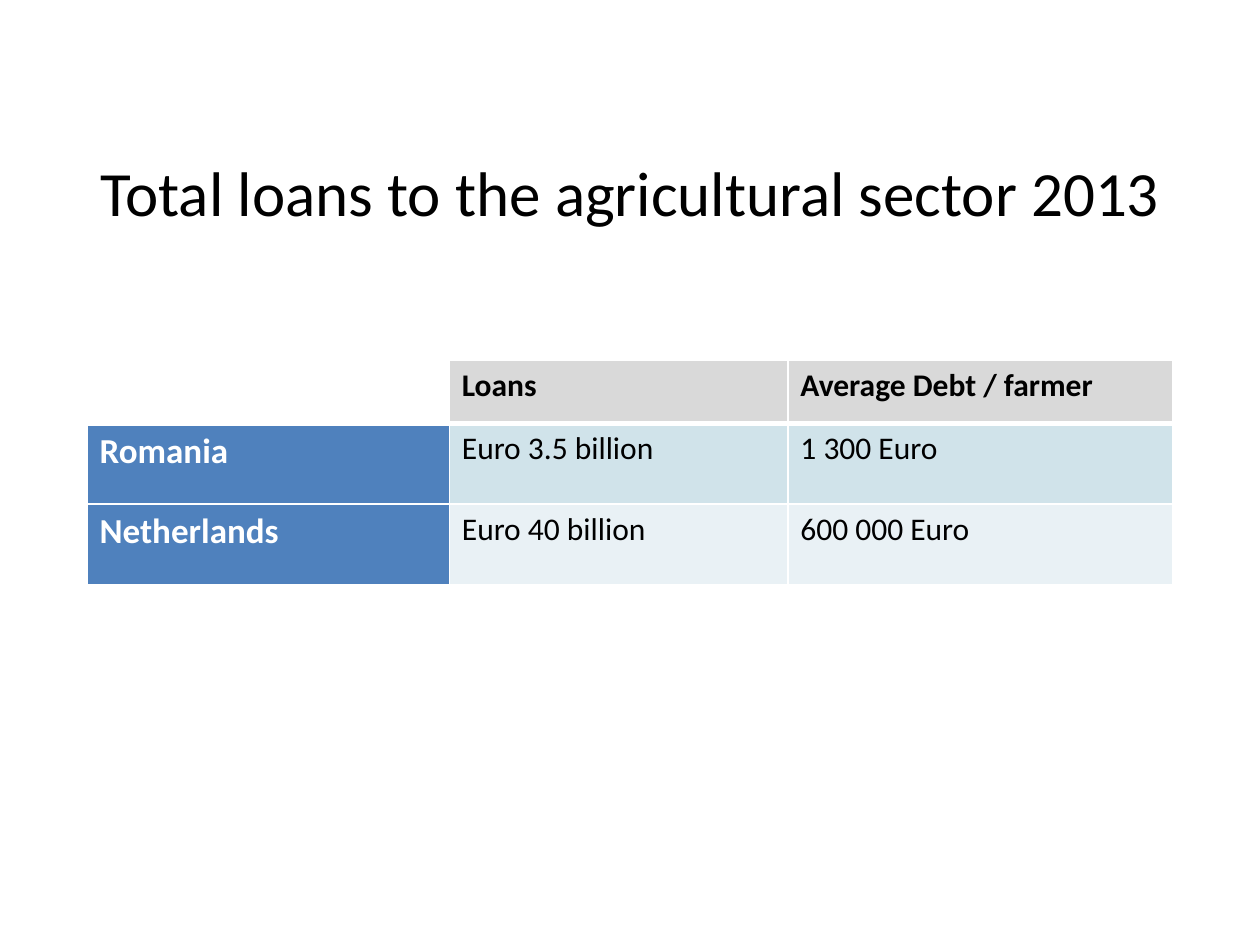
from lxml import etree
from pptx import Presentation
from pptx.dml.color import RGBColor
from pptx.enum.text import MSO_ANCHOR, PP_ALIGN
from pptx.oxml.ns import qn
from pptx.util import Pt

MIDDLE = MSO_ANCHOR.MIDDLE
CENTER = PP_ALIGN.CENTER
FONT = "Calibri"
BLACK = RGBColor(0x00, 0x00, 0x00)
WHITE = RGBColor(0xFF, 0xFF, 0xFF)
GREY = RGBColor(0xD9, 0xD9, 0xD9)
BLUE = RGBColor(0x4F, 0x81, 0xBD)
BANDS = [RGBColor(0xD0, 0xE3, 0xEA), RGBColor(0xE9, 0xF1, 0xF5)]

TITLE = "Total loans to the agricultural sector 2013"
LOANS = [
    ["", "Loans", "Average Debt / farmer"],
    ["Romania", "Euro 3.5 billion", "1 300 Euro"],
    ["Netherlands", "Euro 40 billion", "600 000 Euro"],
]
COLUMN_WIDTHS = [207, 193.5, 220]
ROW_HEIGHTS = [36, 46, 46]


def format_font(font, size, color, bold=False):
    """Set typeface, size, colour and weight of a font."""
    font.name = FONT
    font.size = Pt(size)
    font.bold = bold
    font.color.rgb = color


def add_border(cell, side, width):
    """Add a solid white border to one side of a cell."""
    properties = cell._tc.get_or_add_tcPr()
    line = etree.SubElement(properties, qn(f"a:ln{side}"), w=str(Pt(width)))
    fill = etree.SubElement(line, qn("a:solidFill"))
    etree.SubElement(fill, qn("a:srgbClr"), val=str(WHITE))


def cell_style(row, column):
    """Return fill, text size, text colour and weight for a table position."""
    if row == 0:
        return (GREY if column else WHITE), 18, BLACK, True
    if column == 0:
        return BLUE, 20, WHITE, True
    return BANDS[row - 1], 18, BLACK, False


def place_title(slide, left, top, width, height):
    """Move the title placeholder into the box and fill it."""
    title = slide.shapes.title
    title.left, title.top = Pt(left), Pt(top)
    title.width, title.height = Pt(width), Pt(height)
    text_frame = title.text_frame
    text_frame.text = TITLE
    text_frame.vertical_anchor = MIDDLE
    paragraph = text_frame.paragraphs[0]
    paragraph.alignment = CENTER
    format_font(paragraph.runs[0].font, 36, BLACK)


def place_loan_table(slide, left, top, width, height):
    """Build the loan table in the box."""
    table = slide.shapes.add_table(
        len(LOANS), len(LOANS[0]), Pt(left), Pt(top), Pt(width), Pt(height)
    ).table
    table.first_col = True
    for column, column_width in zip(table.columns, COLUMN_WIDTHS):
        column.width = Pt(column_width)
    for row_index, values in enumerate(LOANS):
        table.rows[row_index].height = Pt(ROW_HEIGHTS[row_index])
        for column_index, value in enumerate(values):
            cell = table.cell(row_index, column_index)
            fill_color, size, color, bold = cell_style(row_index, column_index)
            add_border(cell, "L", 1)
            add_border(cell, "R", 1)
            add_border(cell, "T", 3 if row_index == 1 else 1)
            add_border(cell, "B", 3 if row_index == 0 else 1)
            cell.fill.solid()
            cell.fill.fore_color.rgb = fill_color
            cell.text_frame.text = value
            for run in cell.text_frame.paragraphs[0].runs:
                format_font(run.font, size, color, bold)


def main():
    """Create the presentation with its single slide."""
    presentation = Presentation()
    presentation.slide_width = Pt(720)
    presentation.slide_height = Pt(540)
    slide = presentation.slides.add_slide(presentation.slide_layouts[5])
    left, width = 49.75, sum(COLUMN_WIDTHS)
    place_title(slide, left, 57, width, 104.5)
    place_loan_table(slide, left, 206, width, sum(ROW_HEIGHTS))
    presentation.save("out.pptx")


if __name__ == "__main__":
    main()
